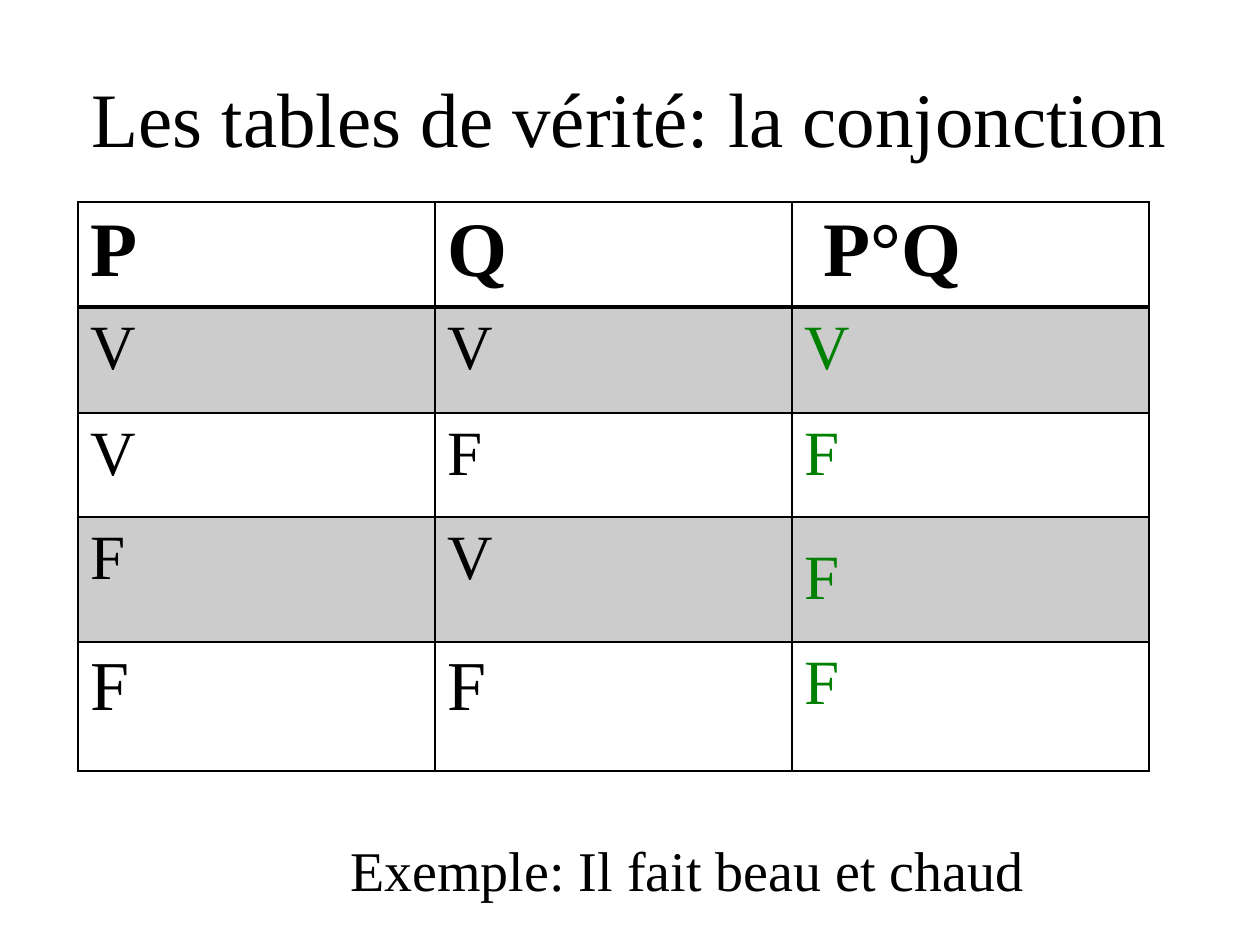
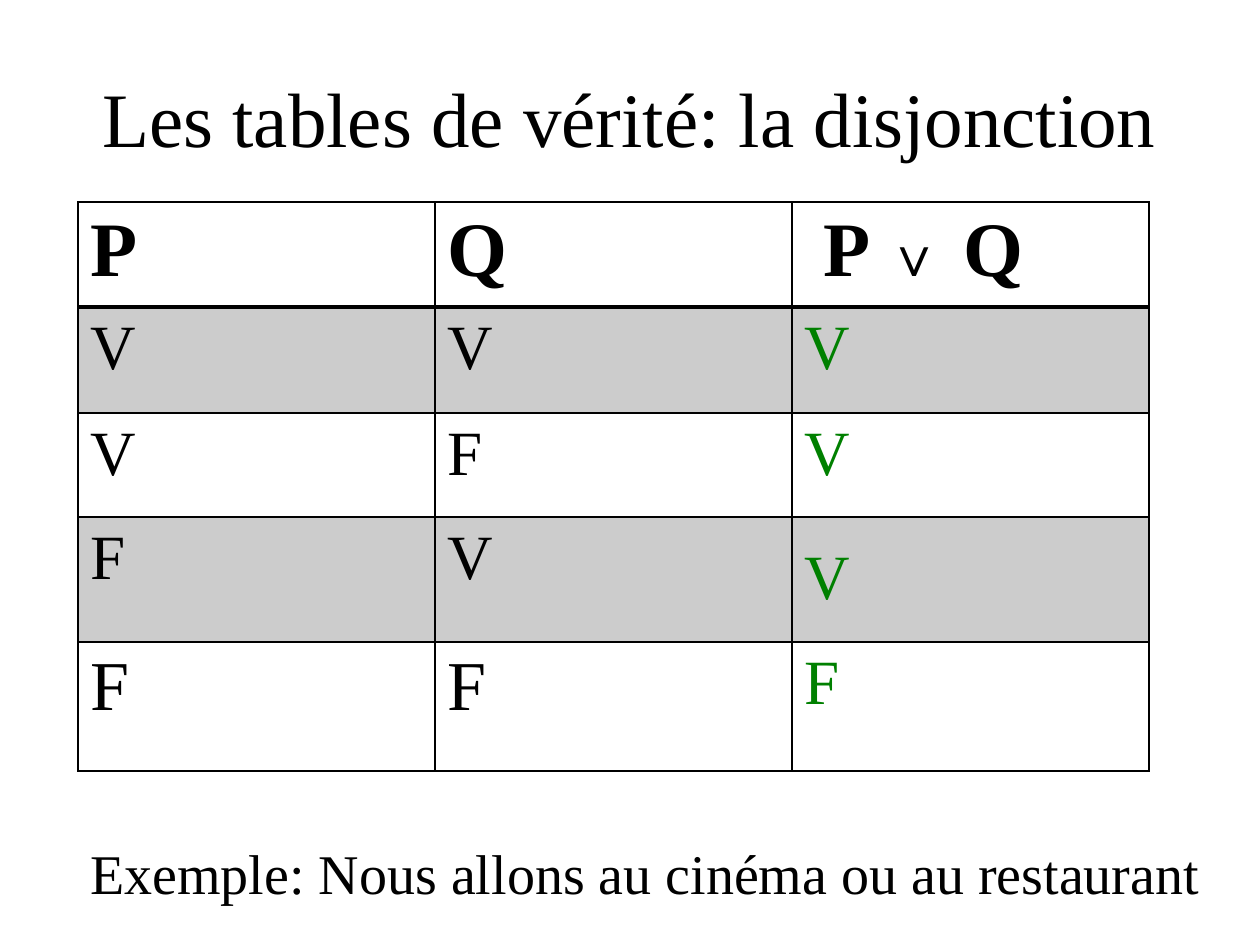
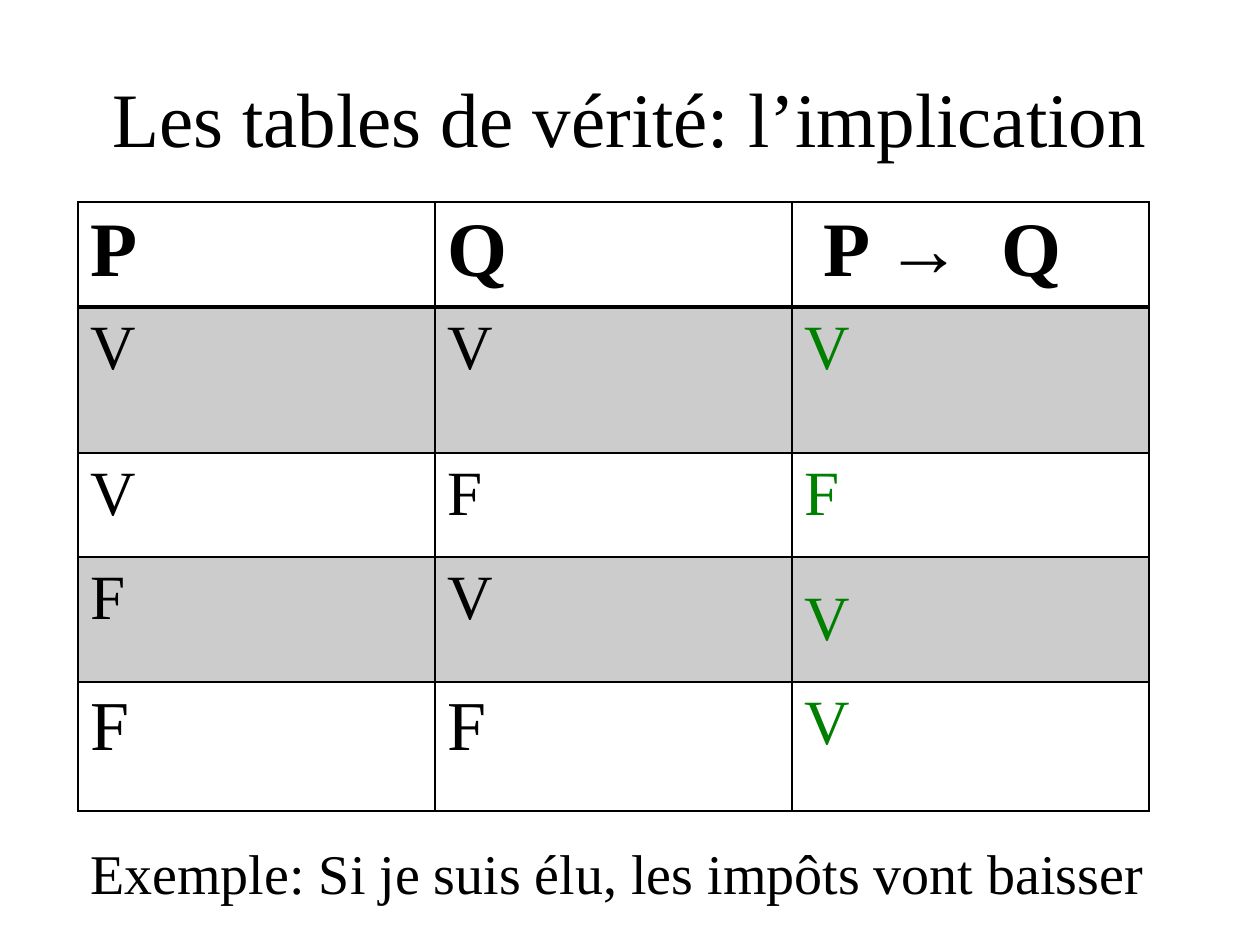
from lxml import etree
from pptx import Presentation
from pptx.dml.color import RGBColor
from pptx.enum.text import MSO_ANCHOR, PP_ALIGN
from pptx.oxml.ns import qn
from pptx.util import Emu, Pt

MIDDLE, TOP = MSO_ANCHOR.MIDDLE, MSO_ANCHOR.TOP
CENTER, LEFT = PP_ALIGN.CENTER, PP_ALIGN.LEFT

SCALE = 914400 / 126
FACE = "Times New Roman"
COLORS = {"ink": "000000", "result": "008000", "band": "CCCCCC"}

# Table grid, in px
COL = 357
ROWS = (97, 106, 104, 125, 129)
TALL = (97, 146, 104, 125, 129)
PAD, INDENT, DROP = 13, 32, 27

# Truth values shared by all tables
INPUTS = ("VV", "VF", "FV", "FF")

# Each header formula is a list of (text, size, wide gap)
LESSONS = (
    {"name": "la conjonction", "formula": [("P°Q", 44, False)],
     "results": "VFFF", "rows": ROWS,
     "example": "Il fait beau et chaud", "box": (338, 829, 706, 81)},
    {"name": "la disjonction",
     "formula": [("P ", 44, False), ("∨", 32, False),
                 (" ", 24, True), ("Q", 44, False)],
     "results": "VVVF", "rows": ROWS,
     "example": "Nous allons au cinéma ou au restaurant",
     "box": (78, 832, 1145, 81)},
    {"name": "l’implication",
     "formula": [("P →", 44, False), (" ", 44, True), ("Q", 44, False)],
     "results": "VFVV", "rows": TALL,
     "example": "Si je suis élu, les impôts vont baisser",
     "box": (78, 832, 1089, 81)},
)


def px(n):
    return Emu(round(n * SCALE))


def put(target, values):
    for key, value in values.items():
        setattr(target, key, value)


def write(para, text, size, color="ink", bold=False, wide=False):
    """Add one run; a wide run gets letter spacing of a quarter em."""
    run = para.add_run()
    run.text = text
    put(run.font, {"name": FACE, "size": Pt(size), "bold": bold})
    run.font.color.rgb = RGBColor.from_string(COLORS[color])
    if wide:
        run.font._element.set("spc", str(size * 25))


def label(slide, text, box, size, align=LEFT, anchor=TOP, wrap=False):
    frame = slide.shapes.add_textbox(*map(px, box)).text_frame
    put(frame, {"word_wrap": wrap, "vertical_anchor": anchor})
    para = frame.paragraphs[0]
    para.alignment = align
    write(para, text, size)


def edge(cell, widths):
    """Draw the cell borders, widths in points by side."""
    props = cell._tc.get_or_add_tcPr()
    for side, width in widths.items():
        line = etree.SubElement(props, qn("a:ln" + side), w=str(Pt(width)))
        fill = etree.SubElement(line, qn("a:solidFill"))
        etree.SubElement(fill, qn("a:srgbClr"), val=COLORS["ink"])


def style(cell, row):
    edge(cell, {"L": 1, "R": 1, "T": 2 if row == 1 else 1,
                "B": 2 if row == 0 else 1})
    if row % 2:
        cell.fill.solid()
        cell.fill.fore_color.rgb = RGBColor.from_string(COLORS["band"])
    else:
        cell.fill.background()


def truth(slide, lesson):
    rows = lesson["rows"]
    box = (78, 202, 3 * COL, sum(rows))
    table = slide.shapes.add_table(len(rows), 3, *map(px, box)).table
    put(table, {"first_row": False, "horz_banding": False})
    for col in table.columns:
        col.width = px(COL)
    for row, high in enumerate(rows):
        table.rows[row].height = px(high)
        for col in range(3):
            style(table.cell(row, col), row)

    # Header
    heads = ([("P", 44, False)], [("Q", 44, False)], lesson["formula"])
    for col, parts in enumerate(heads):
        cell = table.cell(0, col)
        cell.margin_left = px(INDENT if col == 2 else PAD)
        for text, size, wide in parts:
            write(cell.text_frame.paragraphs[0], text, size,
                  bold=True, wide=wide)

    # Values
    for row, (pair, result) in enumerate(zip(INPUTS, lesson["results"]), 1):
        for col, value in enumerate(pair + result):
            last = col == 2
            cell = table.cell(row, col)
            cell.margin_left = px(PAD)
            if last and row == 3:
                cell.margin_top = px(DROP)
            write(cell.text_frame.paragraphs[0], value,
                  40 if row == 4 and not last else 36,
                  "result" if last else "ink")


def main():
    deck = Presentation()
    put(deck, {"slide_width": px(1260), "slide_height": px(945)})
    for lesson in LESSONS:
        slide = deck.slides.add_slide(deck.slide_layouts[6])
        label(slide, "Les tables de vérité: " + lesson["name"],
              (63, 38, 1134, 158), 44, CENTER, MIDDLE, True)
        truth(slide, lesson)
        label(slide, "Exemple: " + lesson["example"], lesson["box"], 32)
    deck.save("out.pptx")


if __name__ == "__main__":
    main()
